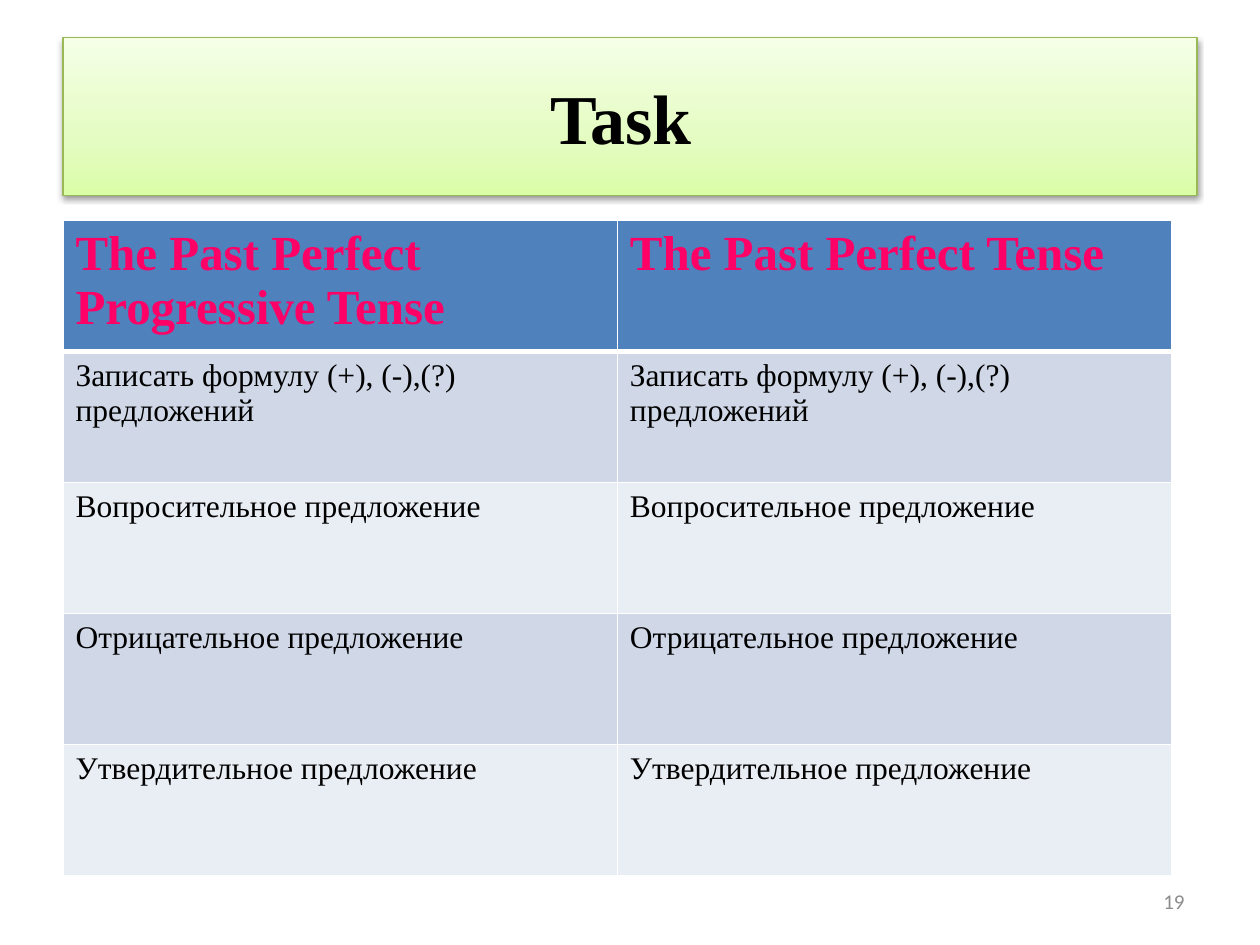
from copy import deepcopy

from lxml.etree import SubElement
from pptx import Presentation
from pptx.dml.color import RGBColor
from pptx.enum.shapes import MSO_SHAPE
from pptx.enum.text import MSO_ANCHOR, PP_ALIGN
from pptx.oxml.ns import qn
from pptx.util import Cm, Pt

BLACK = RGBColor(0x00, 0x00, 0x00)
WHITE = RGBColor(0xFF, 0xFF, 0xFF)
GREY = RGBColor(0x8C, 0x8C, 0x8C)
PINK = RGBColor(0xFF, 0x00, 0x66)
BLUE = RGBColor(0x4F, 0x81, 0xBD)
BANDS = [RGBColor(0xD0, 0xD8, 0xE8), RGBColor(0xE9, 0xED, 0xF4)]
GREEN_LINE = RGBColor(0x98, 0xB9, 0x55)
GREEN_STOPS = [
    (0, RGBColor(0xDA, 0xFD, 0xA7)),
    (0.35, RGBColor(0xE4, 0xFC, 0xC2)),
    (1, RGBColor(0xF5, 0xFF, 0xE7)),
]

HEADINGS = ["The Past Perfect Progressive Tense", "The Past Perfect Tense"]
TASKS = [
    "Записать формулу (+), (-),(?) предложений",
    "Вопросительное предложение",
    "Отрицательное предложение",
    "Утвердительное предложение",
]


def write(tf, text, size=18, color=BLACK, bold=False, font="Times New Roman",
          align=PP_ALIGN.LEFT):
    tf.word_wrap = True
    p = tf.paragraphs[0]
    p.alignment = align
    r = p.add_run()
    r.text = text
    r.font.name = font
    r.font.size = Pt(size)
    r.font.bold = bold
    r.font.color.rgb = color


def fill_gradient(sp, stops):
    """Fill from bottom to top with three (position, colour) stops."""
    sp.fill.gradient()
    sp.fill.gradient_angle = 90
    first = sp._element.spPr.find(qn("a:gradFill")).find(qn("a:gsLst"))[0]
    first.addnext(deepcopy(first))
    for stop, (position, color) in zip(sp.fill.gradient_stops, stops):
        stop.position = position
        stop.color.rgb = color


def add_shadow(sp):
    sp.shadow.inherit = False
    effects = sp._element.spPr.find(qn("a:effectLst"))
    shadow = SubElement(effects, qn("a:outerShdw"), blurRad="40000",
                        dist="20000", dir="5400000", rotWithShape="0")
    color = SubElement(shadow, qn("a:srgbClr"), val=str(BLACK))
    SubElement(color, qn("a:alpha"), val="38000")


def set_borders(cell, color, **widths):
    """Draw the cell's edges; widths in points are keyed L, R, T and B."""
    tc_pr = cell._tc.get_or_add_tcPr()
    for i, edge in enumerate("LRTB"):
        ln = SubElement(tc_pr, qn(f"a:ln{edge}"), w=str(Pt(widths.get(edge, 1))))
        fill = SubElement(ln, qn("a:solidFill"))
        SubElement(fill, qn("a:srgbClr"), val=str(color))
        tc_pr.insert(i, ln)


def add_title(s, left, top, width, height):
    sp = s.shapes.add_shape(MSO_SHAPE.RECTANGLE, left, top, width, height)
    fill_gradient(sp, GREEN_STOPS)
    sp.line.color.rgb = GREEN_LINE
    sp.line.width = Pt(0.75)
    add_shadow(sp)
    sp.text_frame.vertical_anchor = MSO_ANCHOR.MIDDLE
    write(sp.text_frame, "Task ", size=40, bold=True, align=PP_ALIGN.CENTER)


def add_task_table(s, left, top, width, height):
    rows = [HEADINGS] + [[task] * len(HEADINGS) for task in TASKS]
    table = s.shapes.add_table(len(rows), len(HEADINGS), left, top,
                               width, height).table
    for i, texts in enumerate(rows):
        for j, text in enumerate(texts):
            cell = table.cell(i, j)
            cell.fill.solid()
            if i == 0:
                cell.fill.fore_color.rgb = BLUE
                write(cell.text_frame, text, size=28, color=PINK, bold=True)
            else:
                cell.fill.fore_color.rgb = BANDS[(i - 1) % 2]
                write(cell.text_frame, text)
            set_borders(cell, WHITE, T=3 if i == 1 else 1, B=3 if i == 0 else 1)


def add_page_number(s, left, top, width, height):
    tf = s.shapes.add_textbox(left, top, width, height).text_frame
    tf.vertical_anchor = MSO_ANCHOR.MIDDLE
    write(tf, "19", size=12, color=GREY, font="Calibri", align=PP_ALIGN.RIGHT)


def main():
    prs = Presentation()
    prs.slide_width, prs.slide_height = Cm(25.4), Cm(19.05)
    s = prs.slides.add_slide(prs.slide_layouts[6])
    margin = Cm(1.27)
    add_title(s, margin, Cm(0.76), Cm(22.86), Cm(3.18))
    add_task_table(s, margin, Cm(4.45), Cm(22.35), Cm(13.2))
    add_page_number(s, Cm(18.2), Cm(17.66), Cm(5.93), Cm(1.01))
    prs.save("out.pptx")


if __name__ == "__main__":
    main()
